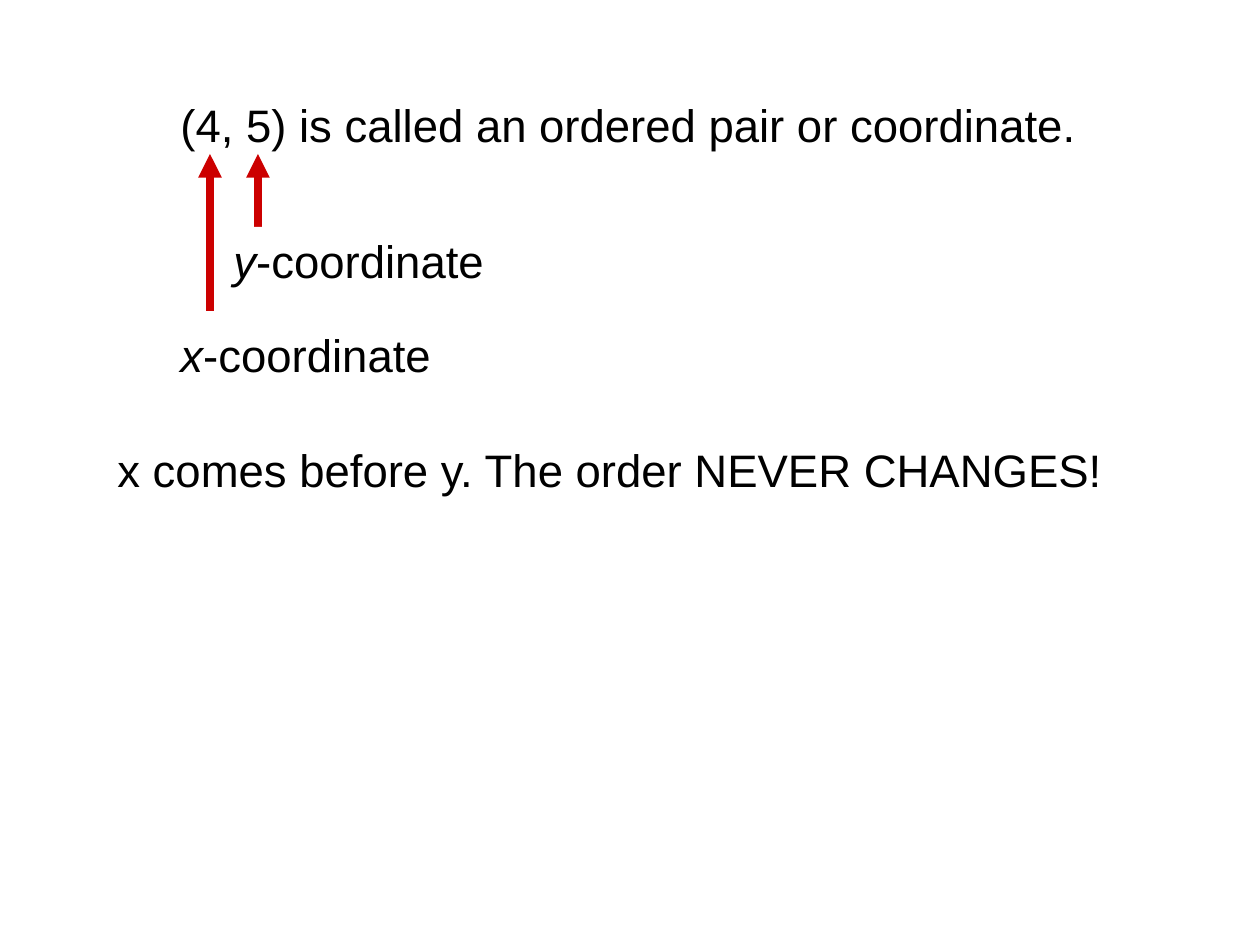
"""Build a slide that names the two parts of an ordered pair."""
from dataclasses import dataclass

from lxml.etree import SubElement
from pptx import Presentation
from pptx.dml.color import RGBColor
from pptx.enum.shapes import MSO_CONNECTOR
from pptx.enum.text import MSO_AUTO_SIZE
from pptx.oxml.ns import qn
from pptx.util import Emu, Pt

COLORS = {"text": "000000", "arrow": "CC0000", "label": "FFFFFF"}
ARROW_TOP = 154


@dataclass(frozen=True)
class Coordinate:
    axis: str
    arrow_x: int
    arrow_bottom: int
    left: int
    top: int
    width: int
    fill: str | None = None


@dataclass(frozen=True)
class Statement:
    text: str
    left: int
    top: int


COORDINATES = [
    Coordinate("x", 210, 311, 168, 321, 336),
    Coordinate("y", 258, 227, 221, 227, 284, "label"),
]
STATEMENTS = [
    Statement("(4, 5) is called an ordered pair or coordinate.", 168, 91),
    Statement("x comes before y. The order NEVER CHANGES!", 105, 436),
]


def px(n: int) -> Emu:
    return Emu(round(n * 914400 / 126))


def rgb(name: str) -> RGBColor:
    return RGBColor.from_string(COLORS[name])


def add_text(s, text: str, *, left: int, top: int, width: int, height: int = 68,
             lead: str = "", size: int = 26, font: str = "Arial",
             color: str = "text", fill: str | None = None) -> None:
    sp = s.shapes.add_textbox(px(left), px(top), px(width), px(height))
    if fill:
        sp.fill.solid()
        sp.fill.fore_color.rgb = rgb(fill)
    tf = sp.text_frame
    tf.word_wrap = True
    tf.auto_size = MSO_AUTO_SIZE.SHAPE_TO_FIT_TEXT
    p = tf.paragraphs[0]
    before = SubElement(p._p.get_or_add_pPr(), qn("a:spcBef"))
    SubElement(before, qn("a:spcPct"), val="50000")
    for part, italic in ((lead, True), (text, False)):
        if part:
            r = p.add_run()
            r.text = part
            r.font.name = font
            r.font.size = Pt(size)
            r.font.italic = italic
            r.font.color.rgb = rgb(color)


def add_arrow(s, x: int, bottom: int) -> None:
    line = s.shapes.add_connector(
        MSO_CONNECTOR.STRAIGHT, px(x), px(bottom), px(x), px(ARROW_TOP))
    line.line.color.rgb = rgb("arrow")
    line.line.width = Pt(4.5)
    SubElement(line.line._get_or_add_ln(), qn("a:tailEnd"), type="triangle")
    SubElement(line._element.spPr, qn("a:effectLst"))


def add_coordinate(s, c: Coordinate) -> None:
    add_arrow(s, c.arrow_x, c.arrow_bottom)
    add_text(s, "-coordinate", lead=c.axis, left=c.left, top=c.top,
             width=c.width, height=67, fill=c.fill)


def main() -> None:
    prs = Presentation()
    prs.slide_width, prs.slide_height = px(1260), px(945)
    s = prs.slides.add_slide(prs.slide_layouts[6])
    for c in COORDINATES:
        add_coordinate(s, c)
    for st in STATEMENTS:
        add_text(s, st.text, left=st.left, top=st.top, width=1061)
    prs.save("out.pptx")


if __name__ == "__main__":
    main()
